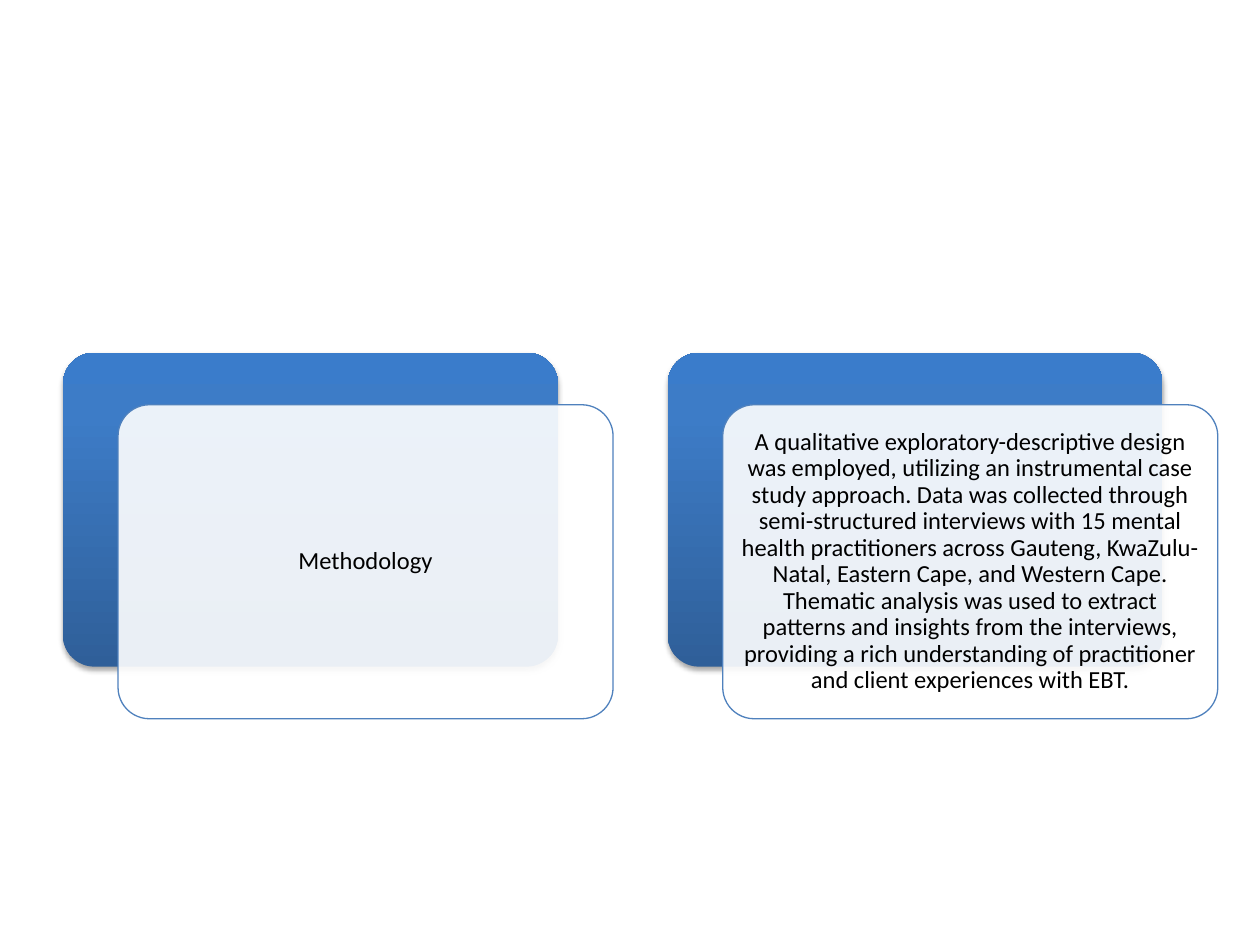
"""Build a slide with two layered cards presenting the study methodology."""
from lxml.etree import SubElement
from pptx import Presentation
from pptx.dml.color import RGBColor
from pptx.enum.shapes import MSO_SHAPE as Shape
from pptx.enum.text import MSO_ANCHOR as Anchor, PP_ALIGN as Align
from pptx.oxml.ns import qn
from pptx.util import Cm, Pt

COLORS = {
    "dark": "2F5F99",
    "mid": "3D7CC7",
    "light": "3A7CCB",
    "card": "FFFFFF",
    "outline": "4F81BD",
    "text": "000000",
    "shadow": "000000",
}
GRADIENT = [(0, "dark"), (80, "mid"), (100, "light")]
TEXTS = [
    "Methodology",
    "A qualitative exploratory-descriptive design was employed, utilizing an "
    "instrumental case study approach. Data was collected through "
    "semi-structured interviews with 15 mental health practitioners across "
    "Gauteng, KwaZulu-Natal, Eastern Cape, and Western Cape. Thematic analysis "
    "was used to extract patterns and insights from the interviews, providing "
    "a rich understanding of practitioner and client experiences with EBT.",
]
LEFT, TOP, PITCH = 1.27, 7.11, 12.19
WIDTH, HEIGHT = 9.98, 6.33
SHIFT_X, SHIFT_Y = 1.11, 1.05
PADDING, INSET = 0.18, 0.15


def add_panel(slide, left, top):
    panel = slide.shapes.add_shape(
        Shape.ROUNDED_RECTANGLE, Cm(left), Cm(top), Cm(WIDTH), Cm(HEIGHT)
    )
    panel.adjustments[0] = 0.1
    panel.shadow.inherit = False
    return panel


def add_color(parent, name, alpha):
    color = SubElement(parent, qn("a:srgbClr"), val=COLORS[name])
    SubElement(color, qn("a:alpha"), val=str(alpha * 1000))


presentation = Presentation()
presentation.slide_width, presentation.slide_height = Cm(25.4), Cm(19.05)
slide = presentation.slides.add_slide(presentation.slide_layouts[6])

for index, text in enumerate(TEXTS):
    left = LEFT + index * PITCH

    back = add_panel(slide, left, TOP)
    back.line.fill.background()
    back.fill.gradient()
    back.fill.gradient_angle = 90
    properties = back._element.spPr
    stops = properties.find(".//" + qn("a:gsLst"))
    stops.clear()
    for position, name in GRADIENT:
        stop = SubElement(stops, qn("a:gs"), pos=str(position * 1000))
        add_color(stop, name, 100)
    shadow = SubElement(
        properties.find(qn("a:effectLst")), qn("a:outerShdw"),
        blurRad=str(Pt(3.1)), dist=str(Pt(1.8)), dir="5400000", rotWithShape="0",
    )
    add_color(shadow, "shadow", 35)

    card_left, card_top = left + SHIFT_X, TOP + SHIFT_Y
    card = add_panel(slide, card_left, card_top)
    card.fill.solid()
    card.fill.fore_color.rgb = RGBColor.from_string(COLORS["card"])
    card_color = card._element.spPr.find(qn("a:solidFill"))[0]
    SubElement(card_color, qn("a:alpha"), val="90000")
    card.line.color.rgb = RGBColor.from_string(COLORS["outline"])
    card.line.width = Pt(0.75)

    label = slide.shapes.add_textbox(
        Cm(card_left + PADDING), Cm(card_top + PADDING),
        Cm(WIDTH - 2 * PADDING), Cm(HEIGHT - 2 * PADDING),
    )
    frame = label.text_frame
    frame.word_wrap = True
    frame.vertical_anchor = Anchor.MIDDLE
    frame.margin_left = frame.margin_right = Cm(INSET)
    frame.margin_top = frame.margin_bottom = Cm(INSET)
    paragraph = frame.paragraphs[0]
    paragraph.text = text
    paragraph.alignment = Align.CENTER
    paragraph.line_spacing = 0.9
    paragraph.font.name = "Calibri"
    paragraph.font.size = Pt(14)
    paragraph.font.color.rgb = RGBColor.from_string(COLORS["text"])

presentation.save("out.pptx")
